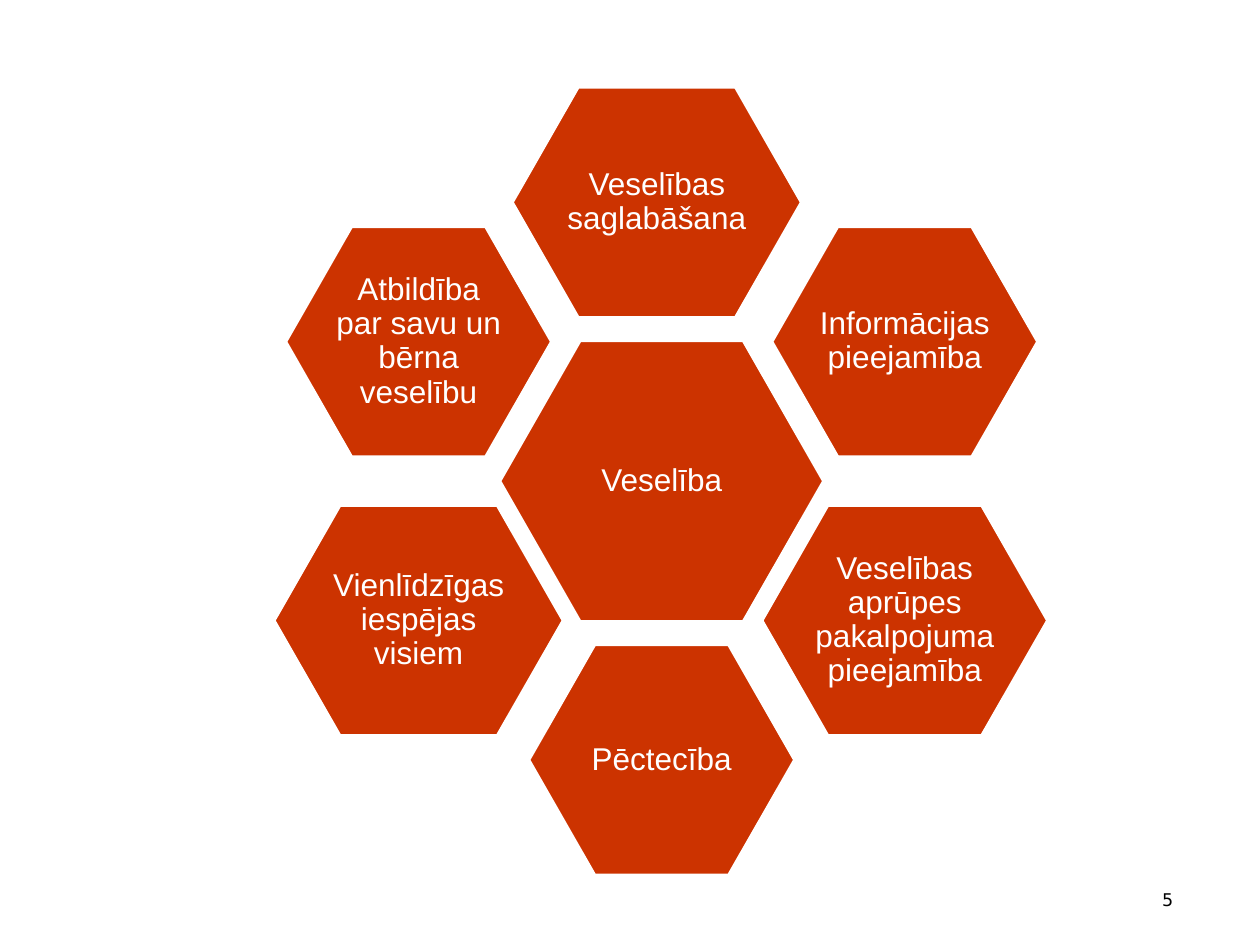
import dataclasses
import pptx
import pptx.dml.color
import pptx.enum.shapes
import pptx.enum.text
import pptx.util

Cm, Pt = pptx.util.Cm, pptx.util.Pt
Align = pptx.enum.text.PP_ALIGN


@dataclasses.dataclass(frozen=True)
class Theme:
    fill: str = "CC3300"
    light: str = "FFFFFF"
    dark: str = "000000"
    font: str = "Arial"
    number_font: str = "DejaVu Sans"
    label_size: float = 18
    number_size: float = 10


def rgb(value):
    return pptx.dml.color.RGBColor.from_string(value)


def write_text(tf, text, *, font, size, color, align, inset=None, spacing=None, after=None):
    tf.word_wrap = True
    tf.vertical_anchor = pptx.enum.text.MSO_ANCHOR.MIDDLE
    if inset is not None:
        tf.margin_left = tf.margin_right = tf.margin_top = tf.margin_bottom = Cm(inset)
    p = tf.paragraphs[0]
    p.alignment = align
    if spacing is not None:
        p.line_spacing = spacing
    if after is not None:
        p.space_after = Pt(after)
    r = p.add_run()
    r.text = text
    r.font.name = font
    r.font.size = Pt(size)
    r.font.color.rgb = rgb(color)


class Deck:
    def __init__(self, theme):
        self.theme = theme
        self.prs = pptx.Presentation()
        self.prs.slide_width, self.prs.slide_height = Cm(25.4), Cm(19.05)
        self.s = self.prs.slides.add_slide(self.prs.slide_layouts[6])

    def hexagon(self, text, center_x, center_y, width, height):
        t = self.theme
        sp = self.s.shapes.add_shape(
            pptx.enum.shapes.MSO_SHAPE.HEXAGON,
            Cm(center_x - width / 2), Cm(center_y - height / 2), Cm(width), Cm(height))
        sp.adjustments[0] = 0.286
        sp.adjustments[1] = 1.1547
        sp.shadow.inherit = False
        sp.fill.solid()
        sp.fill.fore_color.rgb = rgb(t.fill)
        sp.line.color.rgb = rgb(t.light)
        sp.line.width = Pt(1)
        write_text(sp.text_frame, text, font=t.font, size=t.label_size, color=t.light,
                   align=Align.CENTER, inset=0.04, spacing=0.9, after=6.3)

    def page_number(self, text):
        t = self.theme
        sp = self.s.shapes.add_textbox(Cm(21.74), Cm(17.63), Cm(2.16), Cm(1.02))
        write_text(sp.text_frame, text, font=t.number_font, size=t.number_size,
                   color=t.dark, align=Align.RIGHT)


def main():
    deck = Deck(Theme())
    deck.page_number("5")
    hub_x, hub_y = 13.34, 9.7
    step_x, step_y = 4.9, 2.81
    deck.hexagon("Veselība", hub_x, hub_y, 6.5, 5.64)
    ring = [
        ("Veselības saglabāšana", -0.02, -2, 5.8),
        ("Informācijas pieejamība", 1, -1, 5.33),
        ("Veselības aprūpes pakalpojuma pieejamība", 1, 1, 5.73),
        ("Pēctecība", 0, 2, 5.33),
        ("Vienlīdzīgas iespējas visiem", -1, 1, 5.8),
        ("Atbildība par savu un bērna veselību", -1, -1, 5.33),
    ]
    for text, col, row, width in ring:
        deck.hexagon(text, hub_x + col * step_x, hub_y + row * step_y, width, 4.62)
    deck.prs.save("out.pptx")


if __name__ == "__main__":
    main()
